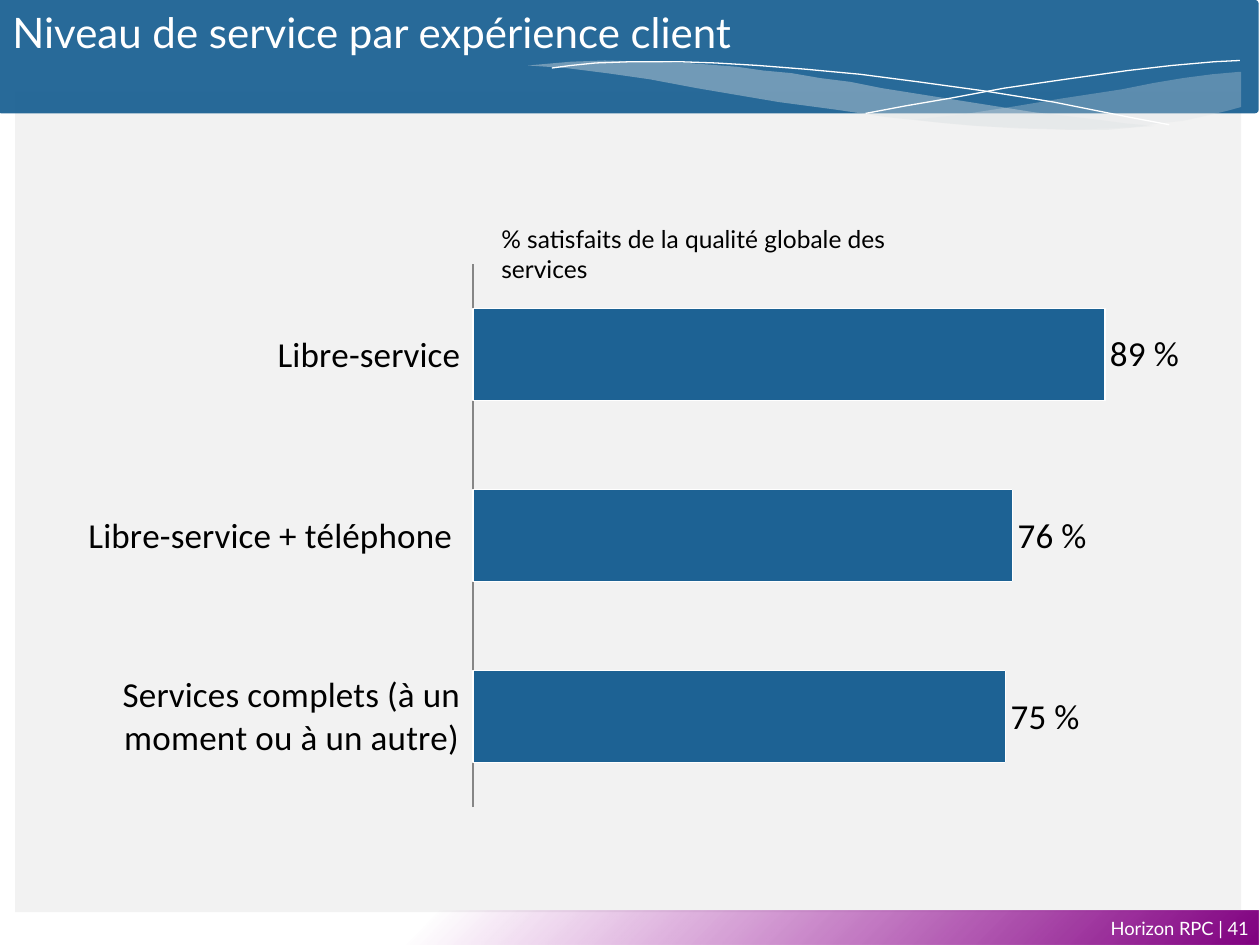
from lxml import etree
from pptx import Presentation
from pptx.chart.data import CategoryChartData
from pptx.dml.color import RGBColor
from pptx.enum.chart import XL_CHART_TYPE as ChartType, XL_LABEL_POSITION as LabelPos
from pptx.enum.chart import XL_TICK_LABEL_POSITION as TickLabels, XL_TICK_MARK as Tick
from pptx.enum.shapes import MSO_SHAPE as Shape
from pptx.enum.text import MSO_ANCHOR as Anchor, PP_ALIGN as Align
from pptx.oxml import parse_xml
from pptx.oxml.ns import nsdecls, qn
from pptx.util import Inches, Pt


def paint(color_format, hex_color, alpha=None):
    """Set a colour, with an optional opacity in percent."""
    color_format.rgb = RGBColor.from_string(hex_color)
    if alpha is not None:
        srgb = color_format._xFill.find(qn("a:srgbClr"))
        etree.SubElement(srgb, qn("a:alpha")).set("val", str(alpha * 1000))


def add_text(words, left, top, width, height, size, color,
             align=Align.LEFT, anchor=Anchor.TOP):
    box = slide.shapes.add_textbox(Inches(left), Inches(top), Inches(width), Inches(height))
    frame = box.text_frame
    frame.text = words
    frame.word_wrap = True
    frame.vertical_anchor = anchor
    frame.paragraphs[0].alignment = align
    font = frame.paragraphs[0].runs[0].font
    font.name, font.size = "Lato", Pt(size)
    paint(font.color, color)


BLUE, WHITE, BLACK, MIST = "1D6294", "FFFFFF", "000000", "DFE3E5"

prs = Presentation()
prs.slide_width, prs.slide_height = Inches(10), Inches(7.5)
slide = prs.slides.add_slide(prs.slide_layouts[6])

# Grey panel, footer band and title banner
bands = []
for preset, left, top, width, height, color, alpha in [
    (Shape.RECTANGLE, 0.12, 0.73, 9.73, 6.51, "F2F2F2", None),
    (Shape.RECTANGLE, -0.02, 7.23, 10.01, 0.27, "800080", None),
    (Shape.ROUNDED_RECTANGLE, -0.02, 0, 10.01, 0.9, BLUE, 95),
]:
    band = slide.shapes.add_shape(preset, Inches(left), Inches(top), Inches(width), Inches(height))
    band.shadow.inherit = False
    band.line.fill.background()
    band.fill.solid()
    paint(band.fill.fore_color, color, alpha)
    bands.append(band)
panel, footer, banner = bands
banner.adjustments[0] = 0.034

# Footer fades out from its lower right corner
fade = parse_xml(
    f'<a:gradFill {nsdecls("a")}><a:gsLst>'
    '<a:gs pos="0"><a:srgbClr val="800080"/></a:gs>'
    '<a:gs pos="66000"><a:srgbClr val="9A009A"><a:alpha val="0"/></a:srgbClr></a:gs>'
    '</a:gsLst><a:path path="circle"><a:fillToRect l="100000" t="100000"/></a:path></a:gradFill>')
footer_props = footer._element.spPr
footer_props.replace(footer_props.find(qn("a:solidFill")), fade)

# Waves of the banner, in hundredths of an inch: points and opacity (None: white line)
waves = [
    ([(984, 57), (962, 59), (939, 62), (915, 66), (890, 71), (844, 78), (802, 85), (763, 91),
      (726, 95), (751, 98), (773, 100), (795, 101), (824, 102), (852, 103), (877, 102),
      (899, 101), (920, 98), (939, 96), (957, 92), (974, 88), (985, 85), (985, 57)], 29),
    ([(916, 100), (894, 98), (871, 95), (820, 89), (763, 80), (700, 70), (675, 65), (651, 62),
      (628, 58), (606, 56), (585, 53), (546, 50), (511, 49), (480, 48), (453, 49), (419, 52),
      (449, 54), (481, 58), (516, 63), (553, 70), (618, 81), (663, 87), (704, 93), (742, 97),
      (777, 100), (808, 102), (846, 103), (880, 103), (902, 101)], 40),
    ([(438, 54), (453, 52), (473, 50), (501, 49), (539, 49), (568, 50), (602, 52), (640, 55),
      (683, 59), (729, 65), (780, 72), (836, 81), (896, 93), (928, 99)], None),
    ([(687, 90), (719, 84), (754, 78), (797, 70), (845, 63), (895, 56), (930, 52), (964, 49),
      (984, 48)], None),
]
for points, alpha in waves:
    filled = alpha is not None
    outline = slide.shapes.build_freeform(*points[0], scale=Inches(0.01))
    outline.add_line_segments(points[1:], close=filled)
    wave = outline.convert_to_shape()
    wave.shadow.inherit = False
    if filled:
        wave.fill.solid()
        paint(wave.fill.fore_color, MIST, alpha)
        wave.line.fill.background()
    else:
        wave.fill.background()
        paint(wave.line.color, WHITE)
        wave.line.width = Pt(0)

# Texts
add_text("Horizon RPC | 41", 0.01, 7.12, 10, 0.49, 10.5, WHITE, Align.RIGHT, Anchor.MIDDLE)
add_text("Niveau de service par expérience client", 0, 0, 6.94, 1.44, 24, WHITE)

# Satisfaction chart
satisfaction = CategoryChartData(number_format="0%")
satisfaction.categories = ["Libre-service", "Libre-service + téléphone ",
                           "Services complets (à un moment ou à un autre)"]
satisfaction.add_series("Series 1", [0.89, 0.76, 0.75])
chart = slide.shapes.add_chart(ChartType.BAR_CLUSTERED, Inches(0.61), Inches(2.09),
                               Inches(9.09), Inches(5.27), satisfaction).chart
chart.has_legend = chart.has_title = False
chart.font.name, chart.font.size = "Calibri", Pt(18)
paint(chart.font.color, BLACK)

services = chart.category_axis
services.reverse_order = True
services.major_tick_mark = services.minor_tick_mark = Tick.NONE
services.tick_label_position = TickLabels.LOW
services.tick_labels.font.size = Pt(20)
paint(services.format.line.color, "868686")

share = chart.value_axis
share.minimum_scale, share.maximum_scale = 0, 1
share.has_major_gridlines = False
share.visible = False

plot = chart.plots[0]
plot.gap_width, plot.overlap = 96, 67
plot.vary_by_categories = False
bars = plot.series[0]
bars.format.fill.solid()
paint(bars.format.fill.fore_color, BLUE)
paint(bars.format.line.color, WHITE)
bars.format.line.width = Pt(0.75)

plot.has_data_labels = True
labels = plot.data_labels
labels.show_value = True
labels.number_format, labels.number_format_is_linked = "0 %", False
labels.position = LabelPos.OUTSIDE_END
labels.font.size = Pt(20)

# Fixed inner plot area
plot_area = chart._chartSpace.chart.plotArea
for old_layout in plot_area.findall(qn("c:layout")):
    plot_area.remove(old_layout)
plot_area.insert(0, parse_xml(
    f'<c:layout {nsdecls("c")}><c:manualLayout><c:layoutTarget val="inner"/>'
    '<c:xMode val="edge"/><c:yMode val="edge"/><c:x val="0.346"/><c:y val="0"/>'
    '<c:w val="0.62"/><c:h val="0.819"/></c:manualLayout></c:layout>'))

# Chart heading
add_text("% satisfaits de la qualité globale des services", 3.88, 1.73, 3.81, 0.34, 14, BLACK)

prs.save("out.pptx")
